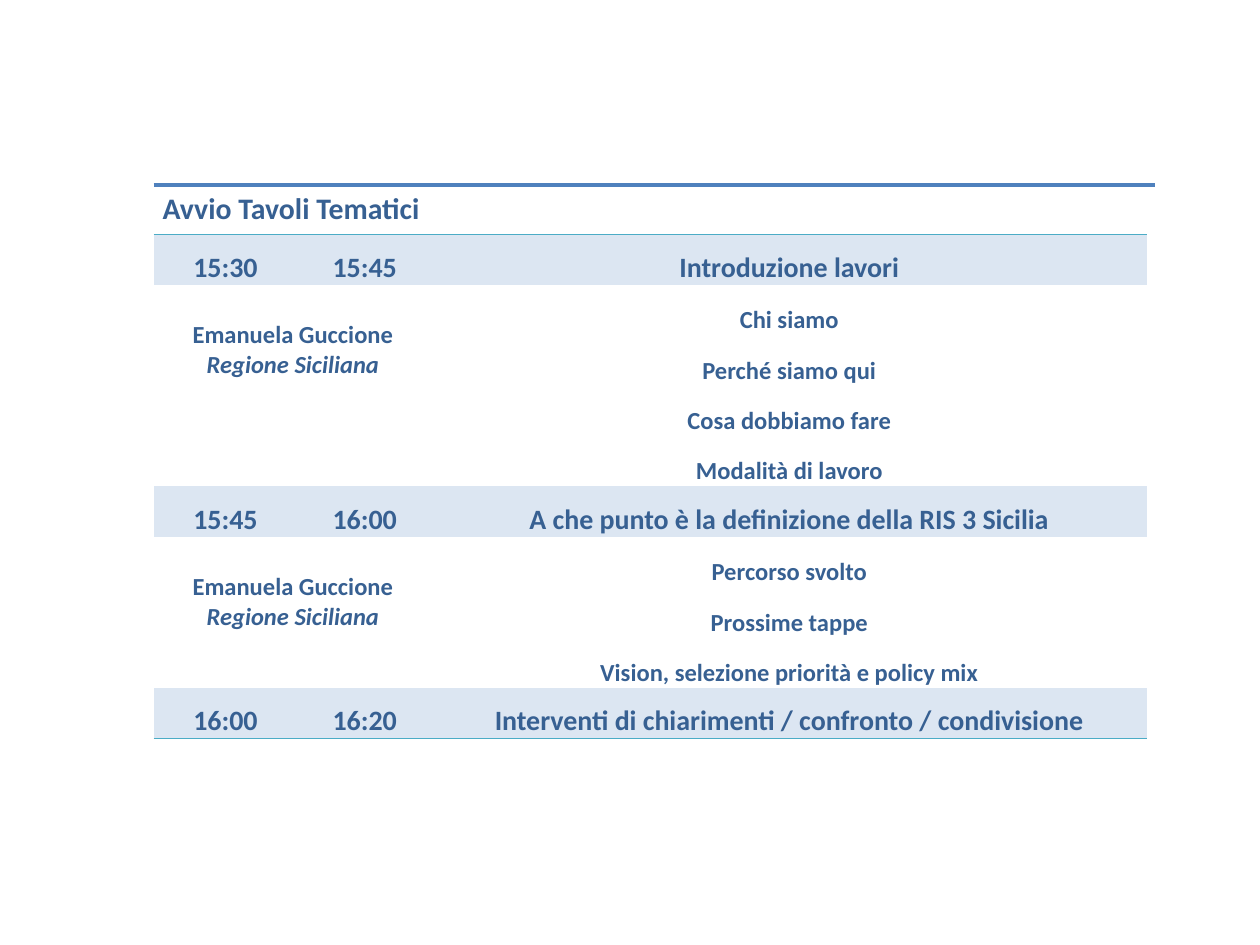
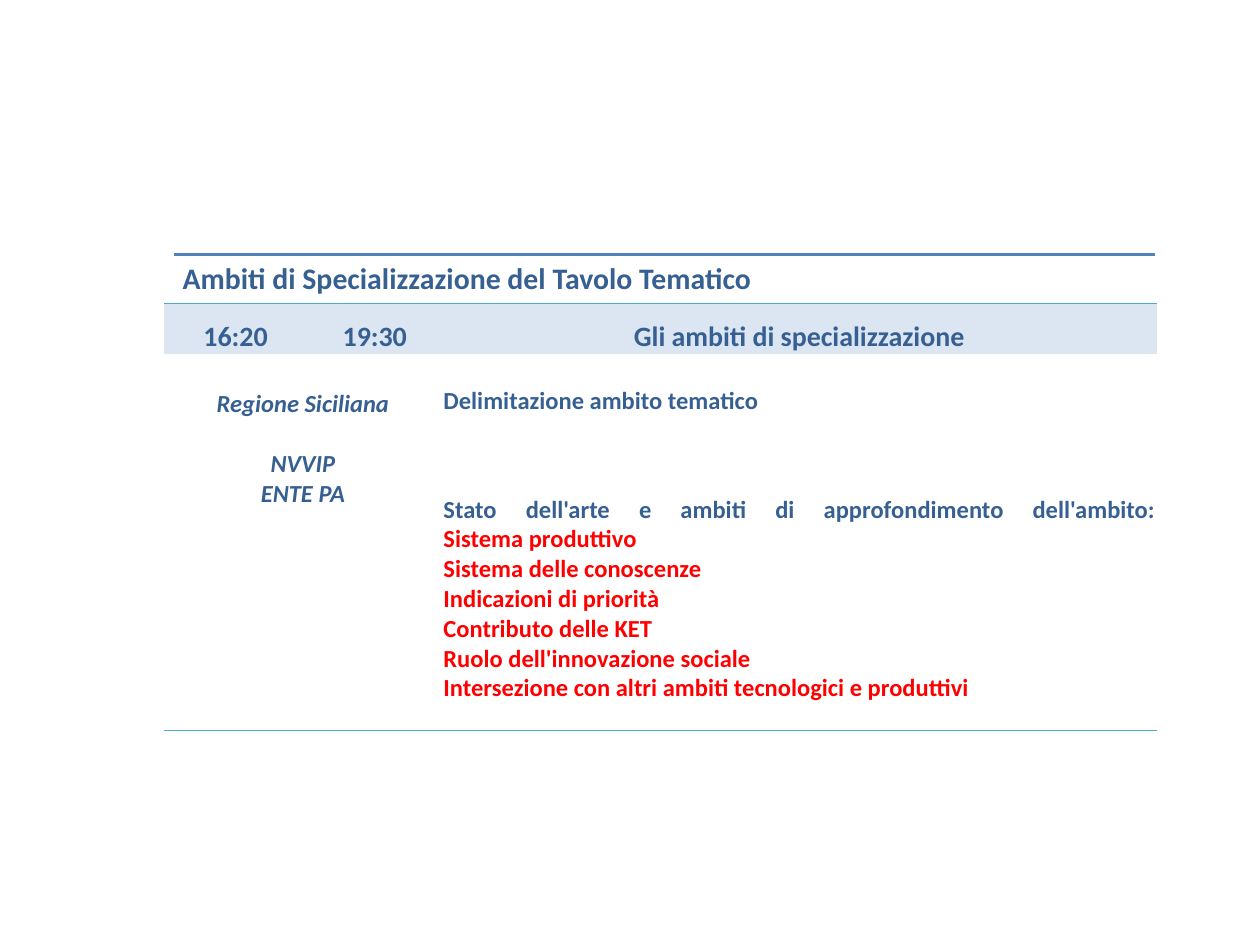
from lxml.etree import SubElement
from pptx import Presentation
from pptx.dml.color import RGBColor
from pptx.enum.shapes import MSO_CONNECTOR
from pptx.enum.text import MSO_ANCHOR, PP_ALIGN
from pptx.oxml.ns import qn
from pptx.util import Inches, Pt

FONT = "Calibri"
NAVY = RGBColor(0x37, 0x60, 0x92)
RULE_BLUE = RGBColor(0x4F, 0x81, 0xBD)
TEAL = RGBColor(0x4B, 0xAC, 0xC6)
BAND = RGBColor(0xDC, 0xE6, 0xF2)
RED = RGBColor(0xFF, 0x00, 0x00)
NO_STYLE = "{2D5ABB26-0587-4C30-8999-92F81FD0307C}"
COLUMNS = (1.14, 1.07, 5.67)
RULE_RIGHT = 9.17
ROW = 0.4
BLANK_LINE = 0.28


def style_runs(p, size, color=NAVY, italic=False):
    for r in p.runs:
        font = r.font
        font.name, font.size, font.bold, font.italic = FONT, Pt(size), True, italic
        font.color.rgb = color


def add_heading(s, text, left, top):
    width = RULE_RIGHT - left
    rule = s.shapes.add_connector(MSO_CONNECTOR.STRAIGHT, Inches(left), Inches(top),
                                  Inches(RULE_RIGHT), Inches(top))
    rule.line.color.rgb = RULE_BLUE
    rule.line.width = Pt(2)
    SubElement(rule._element.spPr, qn("a:effectLst"))
    tf = s.shapes.add_textbox(Inches(left), Inches(top), Inches(width), Inches(ROW)).text_frame
    tf.word_wrap = True
    tf.margin_left = tf.margin_right = tf.margin_top = tf.margin_bottom = Inches(0.07)
    tf.text = text
    tf.paragraphs[0].line_spacing = 0.9
    style_runs(tf.paragraphs[0], 17)


def add_agenda_table(s, left, top, heights):
    frame = s.shapes.add_table(len(heights), len(COLUMNS), Inches(left), Inches(top),
                               Inches(sum(COLUMNS)), Inches(sum(heights)))
    table = frame.table
    table.first_row = table.horz_banding = False
    table._tbl.tblPr.find(qn("a:tableStyleId")).text = NO_STYLE
    for column, width in zip(table.columns, COLUMNS):
        column.width = Inches(width)
    for row, height in zip(table.rows, heights):
        row.height = Inches(height)
        for cell in row.cells:
            cell.fill.background()
            cell.margin_left = cell.margin_right = cell.margin_top = Inches(0.01)
            cell.margin_bottom = 0
    return table


def fill_cell(cell, lines, size=14, anchor=MSO_ANCHOR.BOTTOM, align=PP_ALIGN.CENTER):
    cell.vertical_anchor = anchor
    cell.text_frame.text = "\n".join(lines)
    for p in cell.text_frame.paragraphs:
        p.alignment = align
        style_runs(p, size)
    return cell.text_frame.paragraphs


def add_session(table, row, start, end, title):
    for column, text in enumerate((start, end, title)):
        cell = table.cell(row, column)
        fill_cell(cell, [text], 16)
        cell.fill.solid()
        cell.fill.fore_color.rgb = BAND


def add_speakers(table, row, span, lines):
    cell = table.cell(row, 0)
    cell.merge(table.cell(row + span - 1, 1))
    cell.margin_top = Inches(BLANK_LINE)
    return fill_cell(cell, lines, anchor=MSO_ANCHOR.TOP)


def add_border(table, row, side):
    for cell in table.rows[row].cells:
        tcPr = cell._tc.get_or_add_tcPr()
        line = tcPr.makeelement(qn(f"a:{side}"), {"w": str(Pt(1))})
        SubElement(SubElement(line, qn("a:solidFill")), qn("a:srgbClr"), val=str(TEAL))
        tcPr.insert(0, line)


def build_opening(s):
    add_heading(s, "Avvio Tavoli Tematici", 1.22, 1.47)
    table = add_agenda_table(s, 1.22, 1.86, [ROW] * 10)
    sessions = (
        ("15:30", "15:45", "Introduzione lavori",
         ("Chi siamo", "Perché siamo qui", "Cosa dobbiamo fare", "Modalità di lavoro")),
        ("15:45", "16:00", "A che punto è la definizione della RIS 3 Sicilia",
         ("Percorso svolto", "Prossime tappe", "Vision, selezione priorità e policy mix")),
        ("16:00", "16:20", "Interventi di chiarimenti / confronto / condivisione", ()),
    )
    row = 0
    for start, end, title, topics in sessions:
        add_session(table, row, start, end, title)
        row += 1
        if topics:
            speakers = add_speakers(table, row, len(topics),
                                    ["Emanuela Guccione", "Regione Siciliana"])
            style_runs(speakers[1], 14, italic=True)
        for topic in topics:
            fill_cell(table.cell(row, 2), [topic])
            row += 1
    add_border(table, 0, "lnT")
    add_border(table, row - 1, "lnB")


def build_specialization(s):
    add_heading(s, "Ambiti di Specializzazione del Tavolo Tematico", 1.38, 2.02)
    table = add_agenda_table(s, 1.3, 2.41, [ROW, 0.49, ROW, 2.1])
    add_session(table, 0, "16:20", "19:30", "Gli ambiti di specializzazione")
    speakers = add_speakers(table, 1, 3, ["Regione Siciliana", "NVVIP", "ENTE PA"])
    for p in speakers:
        style_runs(p, 14, italic=True)
    speakers[1].space_before = Pt(17)

    scope = table.cell(1, 2)
    scope.margin_top = Inches(0.25)
    fill_cell(scope, ["Delimitazione ambito tematico"], anchor=MSO_ANCHOR.MIDDLE,
              align=PP_ALIGN.JUSTIFY)
    topics = fill_cell(table.cell(3, 2), [
        "Stato dell'arte e ambiti di approfondimento dell'ambito:\vSistema produttivo",
        "Sistema delle conoscenze",
        "Indicazioni di priorità",
        "Contributo delle KET",
        "Ruolo dell'innovazione sociale",
        "Intersezione con altri ambiti tecnologici e produttivi",
    ], anchor=MSO_ANCHOR.MIDDLE, align=PP_ALIGN.JUSTIFY)
    for p in topics:
        p.runs[-1].font.color.rgb = RED
    add_border(table, 0, "lnT")
    add_border(table, 1, "lnB")
    for cell in list(table.rows[1].cells)[2:]:
        tcPr = cell._tc.tcPr
        tcPr.remove(tcPr.find(qn("a:lnB")))
    add_border(table, 3, "lnB")


def main():
    prs = Presentation()
    prs.slide_width, prs.slide_height = Inches(10), Inches(7.5)
    for build in (build_opening, build_specialization):
        build(prs.slides.add_slide(prs.slide_layouts[6]))
    prs.save("out.pptx")


if __name__ == "__main__":
    main()
